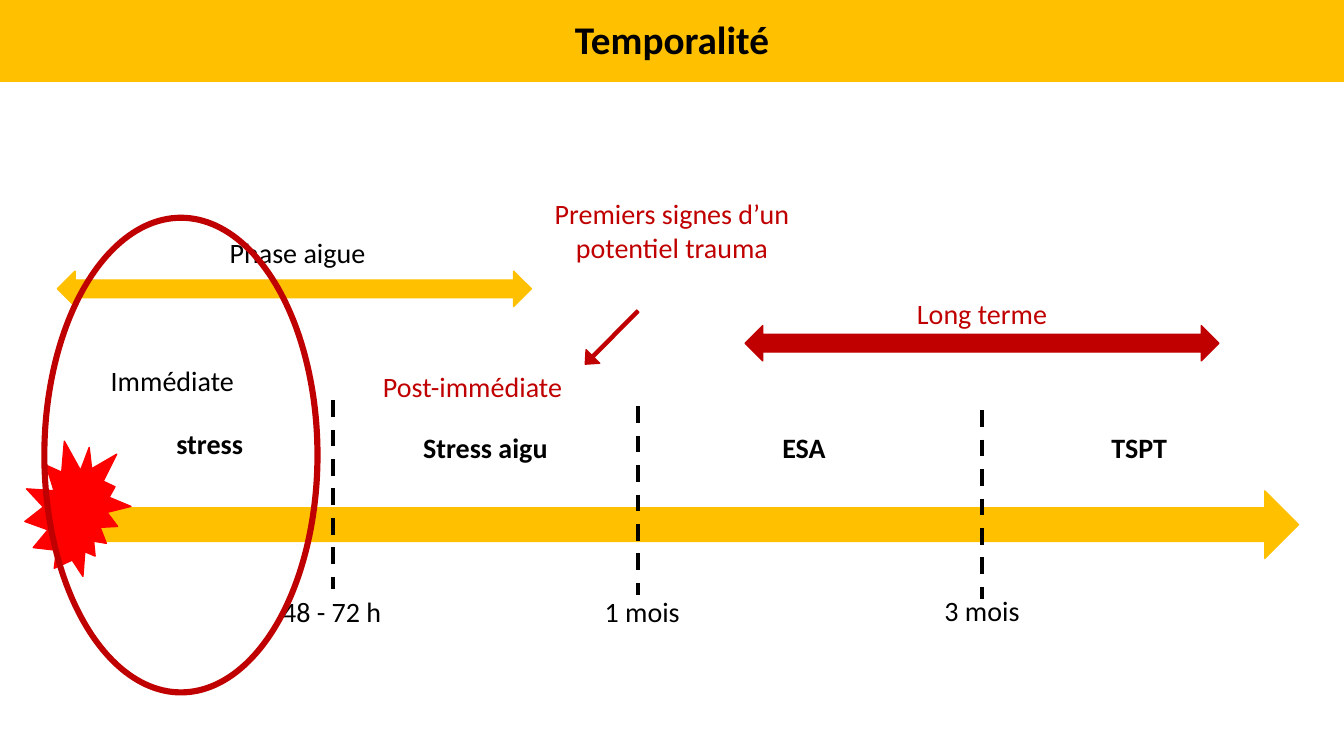
from pptx import Presentation
from pptx.dml.color import RGBColor
from pptx.enum.dml import MSO_LINE
from pptx.enum.shapes import MSO_CONNECTOR, MSO_SHAPE
from pptx.enum.text import MSO_ANCHOR, PP_ALIGN
from pptx.oxml.ns import qn
from pptx.util import Inches, Pt
from lxml.etree import SubElement

GOLD = RGBColor(0xFF, 0xC0, 0x00)
DARK_RED = RGBColor(0xC0, 0x00, 0x00)
RED = RGBColor(0xFF, 0x00, 0x00)
BLACK = RGBColor(0x00, 0x00, 0x00)
LABEL_HEIGHT = 0.44


def write(shape, text, color, size=20, bold=False, align=PP_ALIGN.CENTER):
    paragraph = shape.text_frame.paragraphs[0]
    paragraph.alignment = align
    run = paragraph.add_run()
    run.text = text
    run.font.name = "Calibri"
    run.font.size = Pt(size)
    run.font.bold = bold
    run.font.color.rgb = color


def add_label(slide, text, left, top, width, height=LABEL_HEIGHT, color=BLACK, **style):
    box = slide.shapes.add_textbox(Inches(left), Inches(top), Inches(width), Inches(height))
    box.text_frame.word_wrap = True
    write(box, text, color, **style)


def add_solid(slide, kind, left, top, width, height, color, adjustments=(), rotation=0, outlined=True):
    shape = slide.shapes.add_shape(kind, Inches(left), Inches(top), Inches(width), Inches(height))
    shape.shadow.inherit = False
    shape.fill.solid()
    shape.fill.fore_color.rgb = color
    if outlined:
        shape.line.color.rgb = color
        shape.line.width = Pt(1)
    else:
        shape.line.fill.background()
    for index, value in enumerate(adjustments):
        shape.adjustments[index] = value
    shape.rotation = rotation
    return shape


def add_title(slide, left, top, width, height):
    banner = add_solid(slide, MSO_SHAPE.RECTANGLE, left, top, width, height, GOLD)
    banner.text_frame.vertical_anchor = MSO_ANCHOR.MIDDLE
    write(banner, "Temporalité", BLACK, size=28, bold=True)


def add_period(slide, text, left, top, width, height, label_rise, arrow_color, text_color):
    add_solid(slide, MSO_SHAPE.LEFT_RIGHT_ARROW, left, top, width, height, arrow_color)
    label_width = 2.53
    label_left = left + (width - label_width) / 2
    add_label(slide, text, label_left, top - label_rise, label_width, color=text_color)


def add_milestone(slide, text, left, top, height, label_left, label_top):
    line = slide.shapes.add_connector(
        MSO_CONNECTOR.STRAIGHT, Inches(left), Inches(top), Inches(left), Inches(top + height))
    line.line.color.rgb = BLACK
    line.line.width = Pt(3)
    line.line.dash_style = MSO_LINE.DASH
    SubElement(line._element.spPr, qn("a:effectLst"))
    add_label(slide, text, label_left, label_top, 2.2)


def add_timeline(slide, left, top, width, height):
    add_solid(slide, MSO_SHAPE.RIGHT_ARROW, left, top, width, height, GOLD)
    milestones = (
        ("48 - 72 h", 2.53, -0.9, 1.42, 0.98),
        ("1 mois", 5.56, -0.84, 4.5, 0.98),
        ("3 mois", 8.97, -0.8, 7.87, 0.97),
    )
    for text, line_left, line_top, label_left, label_top in milestones:
        add_milestone(slide, text, left + line_left, top + line_top, 1.87,
                      left + label_left, top + label_top)
    add_solid(slide, MSO_SHAPE.EXPLOSION2, left - 0.59, top - 0.47, 1.19, 1.24, RED, rotation=328.5)
    states = (
        ("stress", 0, -0.69, 2.62),
        ("Stress aigu", 2.78, -0.65, 2.53),
        ("ESA", 5.94, -0.65, 2.53),
        ("TSPT", 8.93, -0.65, 3.2),
    )
    for text, state_left, state_top, state_width in states:
        add_label(slide, text, left + state_left, top + state_top, state_width, bold=True)


def add_first_signs(slide, left, top, width, height):
    add_label(slide, "Premiers signes d’un potentiel trauma", left, top, width, height, DARK_RED)
    add_solid(slide, MSO_SHAPE.DOWN_ARROW, left + 0.57, top + 1.08, 0.19, 0.74, DARK_RED,
              adjustments=(0.158, 0.565), rotation=44.7)


def add_phases(slide, left, top, width):
    add_label(slide, "Immédiate", left, top, width, align=PP_ALIGN.LEFT)
    add_label(slide, "Post-immédiate", left + 2.7, top + 0.06, width,
              color=DARK_RED, align=PP_ALIGN.LEFT)


def add_focus_ring(slide, left, top, width, height):
    add_solid(slide, MSO_SHAPE.DONUT, left, top, width, height, DARK_RED,
              adjustments=(0.022,), outlined=False)


def main():
    presentation = Presentation()
    presentation.slide_width = Inches(13.33)
    presentation.slide_height = Inches(7.5)
    slide = presentation.slides.add_slide(presentation.slide_layouts[6])
    add_title(slide, 0, -0.04, 13.33, 0.85)
    add_phases(slide, 1, 3.56, 2.2)
    add_period(slide, "Long terme", 7.39, 3.23, 4.7, 0.35, 0.34, DARK_RED, DARK_RED)
    add_period(slide, " Phase aigue", 0.57, 2.69, 4.7, 0.35, 0.4, GOLD, BLACK)
    add_timeline(slide, 0.77, 4.87, 12.11, 0.67)
    add_first_signs(slide, 5.4, 1.9, 2.53, 1.11)
    add_focus_ring(slide, 0.41, 2.13, 2.77, 4.77)
    presentation.save("out.pptx")


if __name__ == "__main__":
    main()
